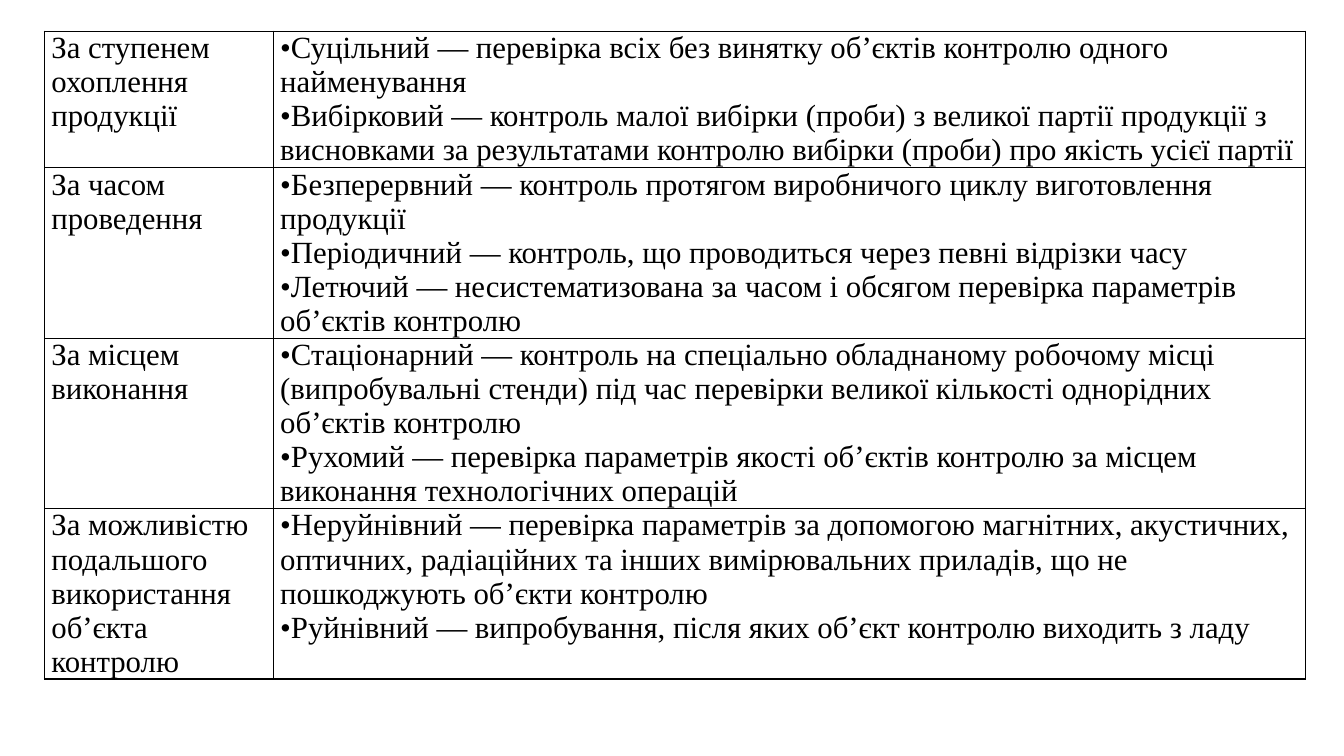
"""Build a slide with a table of quality control types."""
from dataclasses import dataclass

from pptx import Presentation
from pptx.dml.color import RGBColor
from pptx.oxml.ns import qn
from pptx.table import _Cell as Cell
from pptx.util import Inches, Pt
from lxml.etree import SubElement

COLORS = {"text": "000000", "border": "000000"}
FONT_NAME = "Times New Roman"
FONT_SIZE = Pt(22)
BORDER_WIDTH = Pt(1)
LINE_HEIGHT = 0.338
COLUMN_WIDTHS = (2.27, 10.24)


@dataclass(frozen=True)
class ControlGroup:
    criterion: str
    types: tuple[str, ...]
    lines: int


GROUPS = (
    ControlGroup("За ступенем охоплення продукції", (
        "•Суцільний — перевірка всіх без винятку об’єктів контролю одного найменування",
        "•Вибірковий — контроль малої вибірки (проби) з великої партії продукції з "
        "висновками за результатами контролю вибірки (проби) про якість усієї партії",
    ), 4),
    ControlGroup("За часом проведення", (
        "•Безперервний — контроль протягом виробничого циклу виготовлення продукції",
        "•Періодичний — контроль, що проводиться через певні відрізки часу",
        "•Летючий — несистематизована за часом і обсягом перевірка параметрів "
        "об’єктів контролю",
    ), 5),
    ControlGroup("За місцем виконання", (
        "•Стаціонарний — контроль на спеціально обладнаному робочому місці "
        "(випробувальні стенди) під час перевірки великої кількості однорідних "
        "об’єктів контролю",
        "•Рухомий — перевірка параметрів якості об’єктів контролю за місцем "
        "виконання технологічних операцій",
    ), 5),
    ControlGroup("За можливістю подальшого використання об’єкта контролю", (
        "•Неруйнівний — перевірка параметрів за допомогою магнітних, акустичних, "
        "оптичних, радіаційних та інших вимірювальних приладів, що не "
        "пошкоджують об’єкти контролю",
        "•Руйнівний — випробування, після яких об’єкт контролю виходить з ладу",
    ), 5),
)


def add_borders(cell: Cell) -> None:
    properties = cell._tc.get_or_add_tcPr()
    for side in ("a:lnL", "a:lnR", "a:lnT", "a:lnB"):
        line = SubElement(properties, qn(side), w=str(int(BORDER_WIDTH)))
        fill = SubElement(line, qn("a:solidFill"))
        SubElement(fill, qn("a:srgbClr"), val=COLORS["border"])


def fill_cell(cell: Cell, texts: tuple[str, ...]) -> None:
    add_borders(cell)
    cell.fill.background()
    cell.margin_left = cell.margin_right = Inches(0.07)
    cell.margin_top = cell.margin_bottom = Inches(0)
    frame = cell.text_frame
    for index, text in enumerate(texts):
        paragraph = frame.add_paragraph() if index else frame.paragraphs[0]
        run = paragraph.add_run()
        run.text = text
        run.font.name = FONT_NAME
        run.font.size = FONT_SIZE
        run.font.bold = False
        run.font.color.rgb = RGBColor.from_string(COLORS["text"])


def main() -> None:
    presentation = Presentation()
    presentation.slide_width = Inches(13.33)
    presentation.slide_height = Inches(7.5)
    slide = presentation.slides.add_slide(presentation.slide_layouts[6])

    height = LINE_HEIGHT * sum(group.lines for group in GROUPS)
    table = slide.shapes.add_table(
        len(GROUPS), len(COLUMN_WIDTHS), Inches(0.44), Inches(0.31),
        Inches(sum(COLUMN_WIDTHS)), Inches(height)).table
    table.first_row = False
    table.horz_banding = False
    for column, width in zip(table.columns, COLUMN_WIDTHS):
        column.width = Inches(width)
    for row, group in zip(table.rows, GROUPS):
        row.height = Inches(LINE_HEIGHT * group.lines)
        fill_cell(row.cells[0], (group.criterion,))
        fill_cell(row.cells[1], group.types)

    presentation.save("out.pptx")


if __name__ == "__main__":
    main()
